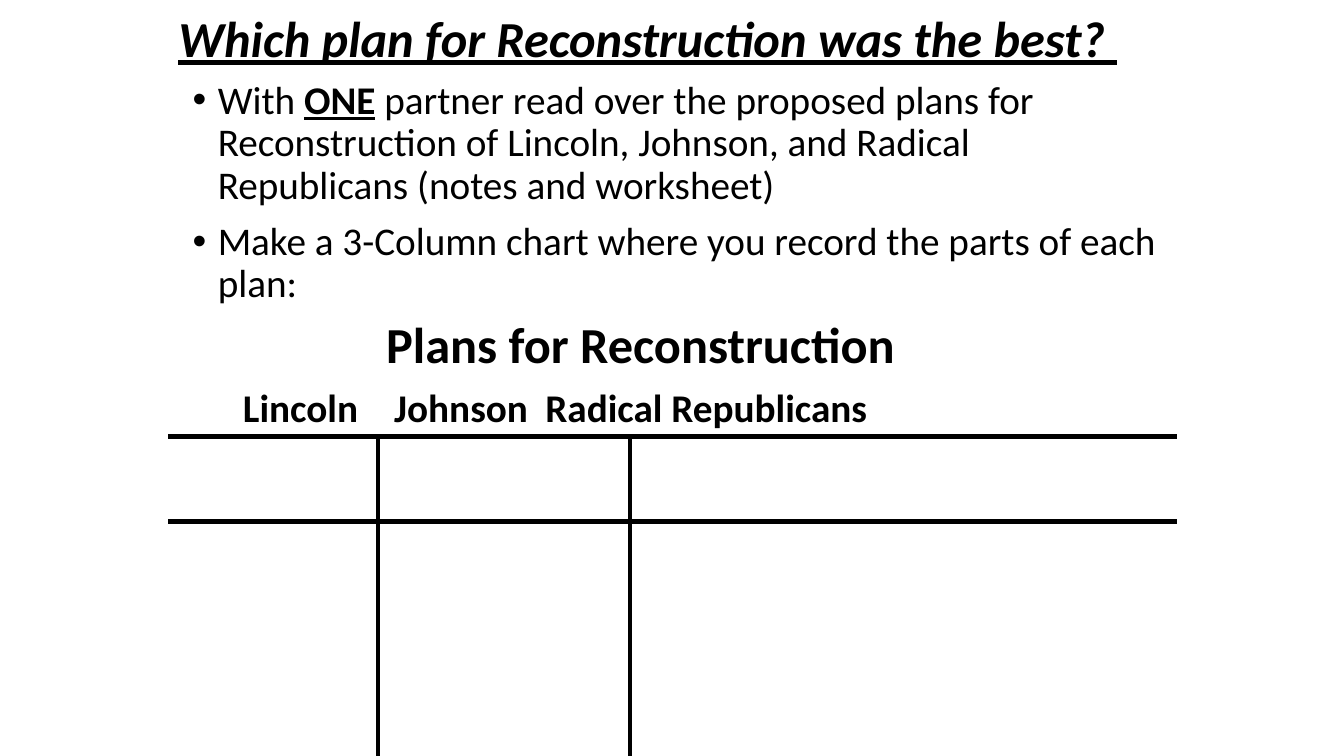
from lxml import etree
from pptx import Presentation
from pptx.dml.color import RGBColor
from pptx.enum.shapes import MSO_CONNECTOR
from pptx.enum.text import MSO_ANCHOR, MSO_AUTO_SIZE, PP_ALIGN
from pptx.oxml.ns import qn
from pptx.util import Inches, Pt

STRAIGHT = MSO_CONNECTOR.STRAIGHT
LEFT = PP_ALIGN.LEFT
TOP, MIDDLE = MSO_ANCHOR.TOP, MSO_ANCHOR.MIDDLE
NO_AUTOFIT = MSO_AUTO_SIZE.NONE


def color(hex_value):
    return RGBColor.from_string(hex_value)


class PlanSlide:
    font, ink = "Calibri", "000000"

    def __init__(self, prs):
        self.s = prs.slides.add_slide(prs.slide_layouts[1])

    def place(self, sp, left, top, width, height, anchor):
        sp.left, sp.top = Inches(left), Inches(top)
        sp.width, sp.height = Inches(width), Inches(height)
        tf = sp.text_frame
        tf.word_wrap, tf.auto_size = True, NO_AUTOFIT
        tf.vertical_anchor = anchor
        return tf

    def style(self, p, size, bold=None, before=0):
        p.alignment, p.line_spacing = LEFT, 0.9
        p.space_before = Pt(before)
        p.font.name, p.font.size, p.font.bold = self.font, Pt(size), bold
        p.font.color.rgb = color(self.ink)

    def title(self, text, box):
        p = self.place(self.s.shapes.title, *box, MIDDLE).paragraphs[0]
        p.text = text
        self.style(p, 36, True)
        p.font.italic = p.font.underline = True

    def body(self, box):
        self.tf = self.place(self.s.placeholders[1], *box, TOP)
        self.first = True

    def paragraph(self, runs, size=28, bold=None, margin=0, bullet=False, tabs=()):
        """Add a paragraph; runs are (text, emphasised) pairs."""
        p = self.tf.paragraphs[0] if self.first else self.tf.add_paragraph()
        self.first = False
        for text, emphasised in runs:
            r = p.add_run()
            r.text = text
            if emphasised:
                r.font.bold = r.font.underline = True
        self.style(p, size, bold, 10)
        pPr = p._p.get_or_add_pPr()
        pPr.set("marL", str(Inches(margin)))
        pPr.set("indent", str(Inches(-margin if bullet else 0)))
        # Bullet and tab stops go before the default run properties
        parts = []
        if bullet:
            parts.append(etree.Element(qn("a:buFont"), typeface="Arial"))
            parts.append(etree.Element(qn("a:buChar"), char="•"))
        else:
            parts.append(etree.Element(qn("a:buNone")))
        if tabs:
            tab_list = etree.Element(qn("a:tabLst"))
            for pos in tabs:
                etree.SubElement(tab_list, qn("a:tab"), pos=str(Inches(pos)), algn="l")
            parts.append(tab_list)
        defaults = pPr.find(qn("a:defRPr"))
        for part in parts:
            defaults.addprevious(part)

    def line(self, x1, y1, x2, y2, width):
        c = self.s.shapes.add_connector(
            STRAIGHT, Inches(x1), Inches(y1), Inches(x2), Inches(y2))
        c.line.color.rgb = color(self.ink)
        c.line.width = Pt(width)
        etree.SubElement(c._element.spPr, qn("a:effectLst"))


def main():
    prs = Presentation()
    prs.slide_width, prs.slide_height = Inches(13.33), Inches(7.5)
    slide = PlanSlide(prs)

    # Title and instructions
    slide.title("Which plan for Reconstruction was the best? ", (1.67, -0.01, 10, 0.83))
    slide.body((1.81, 0.75, 9.83, 5.42))
    slide.paragraph([
        ("With ", False),
        ("ONE", True),
        (" partner read over the proposed plans for Reconstruction of Lincoln, "
         "Johnson, and Radical Republicans (notes and worksheet)", False),
    ], margin=0.25, bullet=True)
    slide.paragraph([("Make a 3-Column chart where you record the parts of each plan:", False)],
                    margin=0.25, bullet=True)

    # Chart heading and column names
    slide.paragraph([("Plans for Reconstruction", False)], size=36, bold=True, margin=1.92)
    slide.paragraph([("\tLincoln\tJohnson\tRadical Republicans", False)], bold=True,
                    tabs=(0.25, 1.83, 4.04))

    # Chart rules
    for y in (4.33, 5.17):
        slide.line(1.67, y, 11.67, y, 3.5)
    for x in (3.75, 6.25):
        slide.line(x, 4.33, x, 7.5, 3.25)

    prs.save("out.pptx")


if __name__ == "__main__":
    main()
